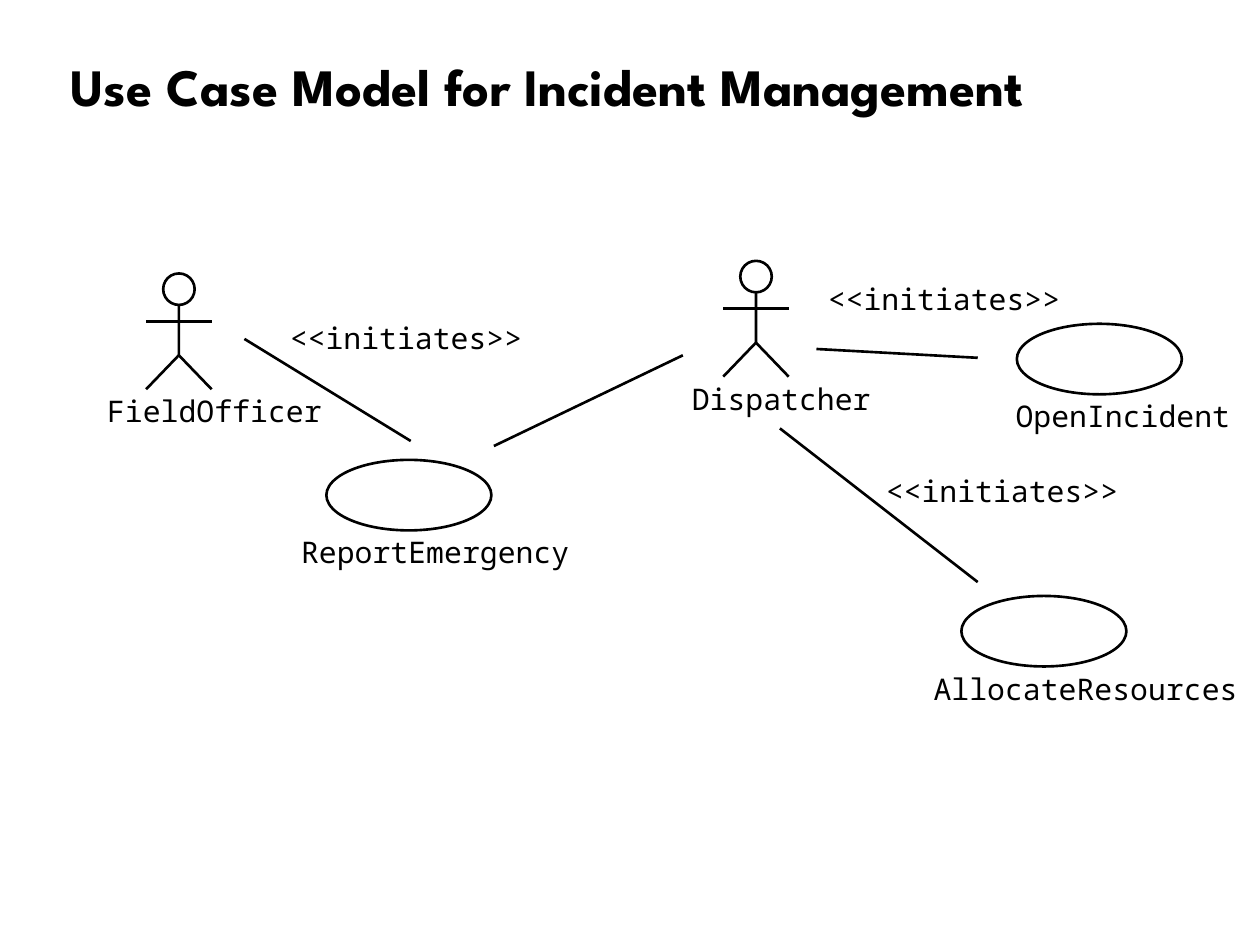
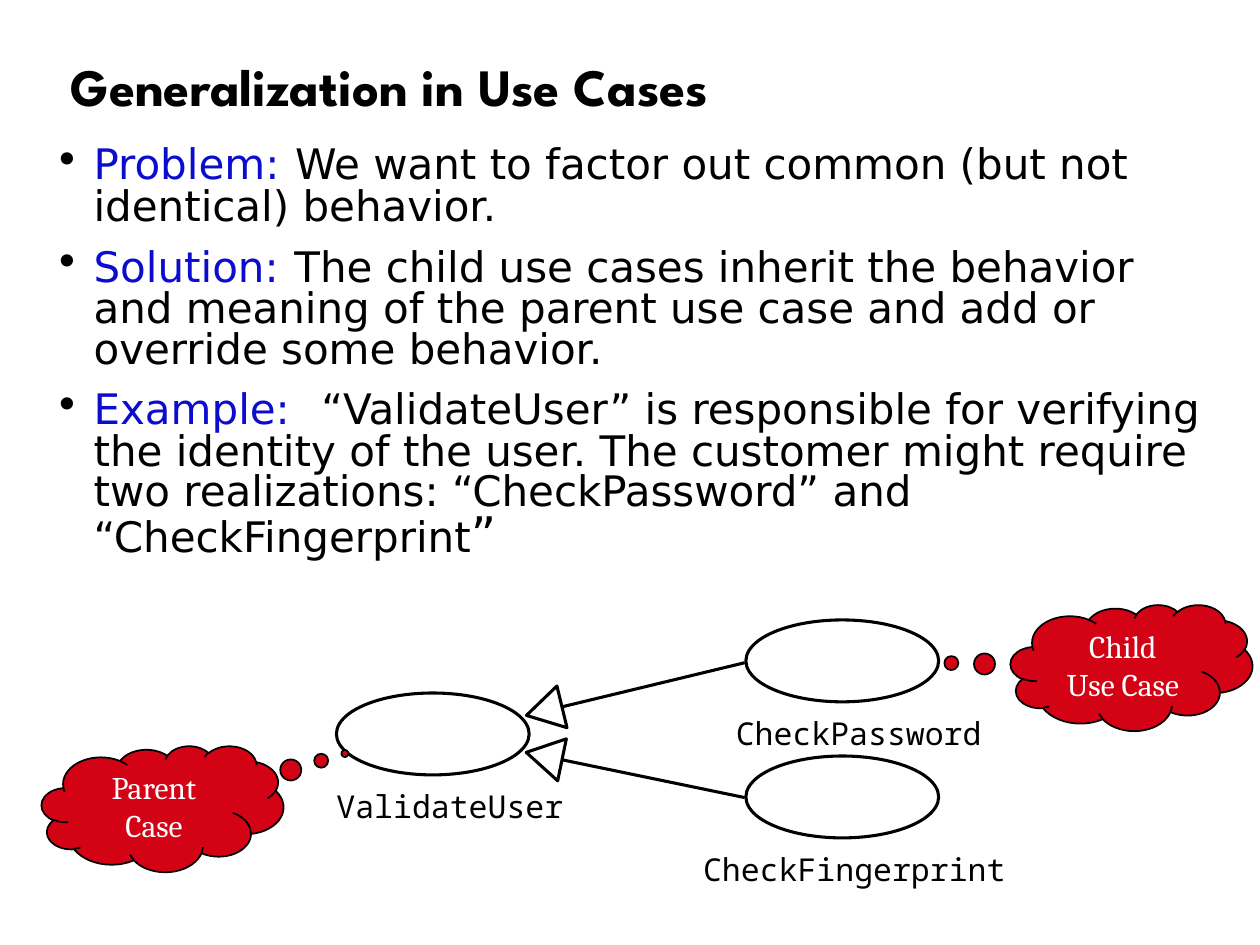
from dataclasses import dataclass
from math import atan2, degrees, hypot

from lxml.etree import SubElement
from pptx import Presentation
from pptx.dml.color import RGBColor as RGB
from pptx.enum.shapes import MSO_CONNECTOR as Link, MSO_SHAPE as Kind
from pptx.enum.text import MSO_ANCHOR as Anchor, MSO_AUTO_SIZE as Fit, PP_ALIGN as Align
from pptx.oxml.ns import qn
from pptx.util import Inches, Pt


@dataclass(frozen=True)
class Theme:
    ink: RGB = RGB(0, 0, 0)
    paper: RGB = RGB(255, 255, 255)
    key: RGB = RGB(0x0C, 0x0C, 0xCF)
    cloud: RGB = RGB(0xD3, 0x03, 0x15)
    head_font: str = "League Spartan"
    body_font: str = "DejaVu Sans"
    code_font: str = "Noto Sans Mono"
    note_font: str = "Cambria"
    head: int = 30
    body: int = 24
    gap: int = 28
    note: int = 18


@dataclass(frozen=True)
class Scale:
    """Size of a use case, drop to its label, label type and line width."""
    wide: float
    high: float
    drop: float
    type: int
    line: float


THEME = Theme()
SMALL = Scale(1.31, 0.56, 0.59, 17, 1.5)
LARGE = Scale(1.53, 0.65, 0.75, 18, 1.75)


def box(x, y, wide, high):
    return [Inches(n) for n in (x, y, wide, high)]


def style(font, name, size, color, bold=False):
    font.name, font.size, font.bold = name, Pt(size), bold
    font.color.rgb = color


def edge(shape, width):
    shape.line.color.rgb = THEME.ink
    shape.line.width = Pt(width)


def page(deck, text):
    slide = deck.slides.add_slide(deck.slide_layouts[5])
    title = slide.shapes.title
    title.left, title.top, title.width, title.height = box(0.46, 0.24, 8.92, 0.94)
    frame = title.text_frame
    frame.text = text
    frame.auto_size = Fit.NONE
    frame.vertical_anchor = Anchor.MIDDLE
    para = frame.paragraphs[0]
    para.alignment, para.line_spacing = Align.LEFT, 0.9
    style(para.font, THEME.head_font, THEME.head, THEME.ink, True)
    return slide


def draw(slide, kind, place, width, fill=None):
    shape = slide.shapes.add_shape(kind, *box(*place))
    shape.shadow.inherit = False
    if fill is None:
        shape.fill.background()
    else:
        shape.fill.solid()
        shape.fill.fore_color.rgb = fill
    edge(shape, width)
    return shape


def link(slide, start, end, width):
    line = slide.shapes.add_connector(Link.STRAIGHT, *box(*start, *end))
    edge(line, width)
    SubElement(line._element.spPr, qn("a:effectLst"))


def label(slide, x, y, text, size):
    """Monospaced text in a box slightly wider than its letters."""
    wide = len(text) * size / 120 + 0.02
    frame = slide.shapes.add_textbox(*box(x, y, wide, size / 60)).text_frame
    frame.margin_left = frame.margin_right = frame.margin_top = frame.margin_bottom = 0
    frame.word_wrap, frame.auto_size = False, Fit.SHAPE_TO_FIT_TEXT
    frame.text = text
    style(frame.paragraphs[0].font, THEME.code_font, size, THEME.ink)


def case(slide, x, y, name, shift, scale, fill=None):
    draw(slide, Kind.OVAL, (x, y, scale.wide, scale.high), scale.line, fill)
    label(slide, x + shift, y + scale.drop, name, scale.type)


def actor(slide, x, y, name, left):
    """Stick figure with its head's top centre at x, y; left places the name."""
    hip, foot, arm, reach, width = y + 0.65, y + 0.92, y + 0.38, 0.26, SMALL.line
    path = slide.shapes.build_freeform(Inches(x), Inches(y + 0.19))
    points = [(x, hip), (x - reach, foot)]
    path.add_line_segments([(Inches(a), Inches(b)) for a, b in points], close=False)
    body = path.convert_to_shape()
    body.shadow.inherit = False
    body.fill.background()
    edge(body, width)
    link(slide, (x, hip), (x + reach, foot), width)
    link(slide, (x - reach, arm), (x + reach, arm), width)
    draw(slide, Kind.OVAL, (x - 0.125, y, 0.25, 0.25), width, THEME.paper)
    label(slide, left, y + 0.95, name, SMALL.type)


def derive(slide, child, base):
    """Generalization line from child to the base of its hollow arrowhead."""
    wide, high = 0.34, 0.29
    dx, dy = base[0] - child[0], base[1] - child[1]
    half = high / 2 / hypot(dx, dy)
    x, y = base[0] + dx * half, base[1] + dy * half
    place = (x - wide / 2, y - high / 2, wide, high)
    tip = draw(slide, Kind.ISOSCELES_TRIANGLE, place, LARGE.line, THEME.paper)
    tip.rotation = degrees(atan2(dx, -dy)) % 360
    link(slide, base, child, LARGE.line)


def cloud(slide, x, y, lines, tail):
    shape = draw(slide, Kind.CLOUD_CALLOUT, (x, y, 1.92, 1), 1, THEME.cloud)
    shape.adjustments[0], shape.adjustments[1] = tail
    frame = shape.text_frame
    frame.word_wrap, frame.vertical_anchor = False, Anchor.MIDDLE
    frame.text = "\n".join(lines)
    for para in frame.paragraphs:
        para.alignment = Align.CENTER
        style(para.font, THEME.note_font, THEME.note, THEME.paper)


def bullet(para):
    props = para._p.get_or_add_pPr()
    props.set("marL", str(Inches(0.31)))
    props.set("indent", str(-Inches(0.31)))
    tint = SubElement(props, qn("a:buClr"))
    SubElement(tint, qn("a:srgbClr")).set("val", str(THEME.ink))
    SubElement(props, qn("a:buFont")).set("typeface", THEME.body_font)
    SubElement(props, qn("a:buChar")).set("char", "•")


def points(slide, items):
    """Bullets of key, extra points after the key, text and large end mark."""
    frame = slide.shapes.add_textbox(*box(0.335, 1.08, 9.37, 3.44)).text_frame
    frame.word_wrap = True
    for i, (key, extra, text, mark) in enumerate(items):
        para = frame.add_paragraph() if i else frame.paragraphs[0]
        para.line_spacing, para.space_before = 0.8, Pt(8.5)
        bullet(para)
        for words, size, color, space in [(key, THEME.body, THEME.key, 0),
                                          (" ", THEME.gap, THEME.ink, extra),
                                          (text, THEME.body, THEME.ink, 0),
                                          (mark, THEME.gap, THEME.ink, 0)]:
            if not words:
                continue
            run = para.add_run()
            run.text = words
            style(run.font, THEME.body_font, size, color)
            if space:
                run.font._element.set("spc", str(space * 100))


def model(deck):
    slide = page(deck, "Use Case Model for Incident Management")
    actor(slide, 1.42, 2.17, "FieldOfficer", 0.85)
    actor(slide, 6, 2.07, "Dispatcher", 5.49)
    for x, y, name, shift in [(2.59, 3.65, "ReportEmergency", -0.2),
                              (8.07, 2.57, "OpenIncident", -0.01),
                              (7.63, 4.73, "AllocateResources", -0.22)]:
        case(slide, x, y, name, shift, SMALL)
    for start, end in [((1.94, 2.69), (3.26, 3.5)), ((6.19, 3.4), (7.76, 4.62)),
                       ((6.48, 2.77), (7.76, 2.84)), ((3.92, 3.54), (5.42, 2.82))]:
        link(slide, start, end, SMALL.line)
    for x, y in [(2.3, 2.54), (6.57, 2.23), (7.03, 3.75)]:
        label(slide, x, y, "<<initiates>>", SMALL.type)


def general(deck):
    slide = page(deck, "Generalization in Use Cases")
    points(slide, [
        ("Problem:", 0, "We want to factor out common (but not identical) behavior.", ""),
        ("Solution:", 0, "The child use cases inherit the behavior and meaning of the "
                         "parent use case and add or override some behavior.", ""),
        ("Example:", 9, "“ValidateUser” is responsible for verifying the identity of the "
                        "user. The customer might require two realizations: "
                        "“CheckPassword” and “CheckFingerprint", "”"),
    ])
    case(slide, 2.67, 5.5, "ValidateUser", 0, LARGE)
    cloud(slide, 0.33, 5.92, ["Parent", "Case"], (0.754, -0.439))
    cloud(slide, 8.02, 4.8, ["Child", "Use Case"], (-0.853, -0.042))
    case(slide, 5.92, 4.92, "CheckPassword", -0.08, LARGE, THEME.paper)
    derive(slide, (5.91, 5.26), (4.46, 5.61))
    case(slide, 5.92, 6, "CheckFingerprint", -0.34, LARGE)
    derive(slide, (5.91, 6.33), (4.46, 6.03))


def main():
    deck = Presentation()
    deck.slide_width, deck.slide_height = Inches(10), Inches(7.5)
    model(deck)
    general(deck)
    deck.save("out.pptx")


if __name__ == "__main__":
    main()
